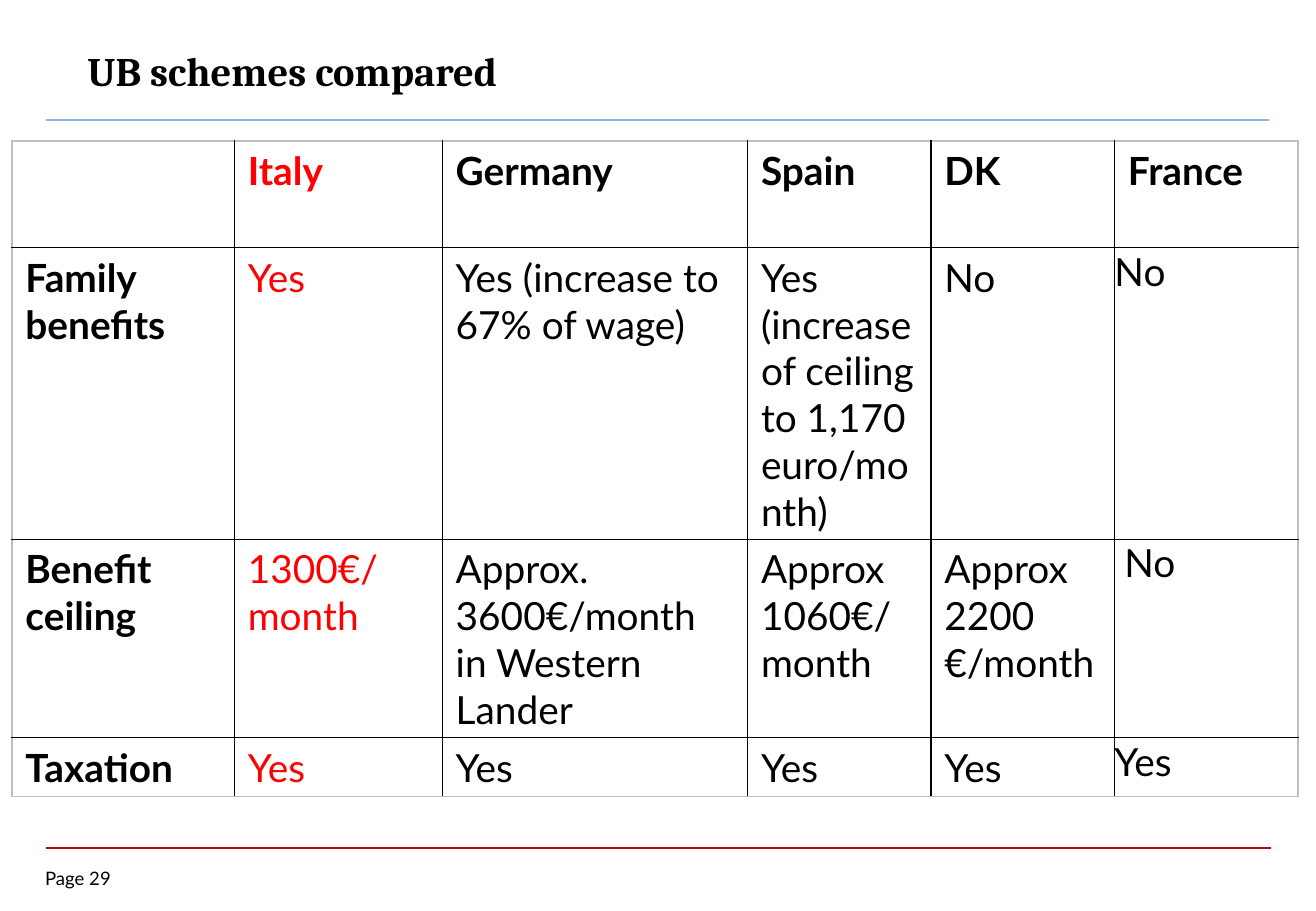
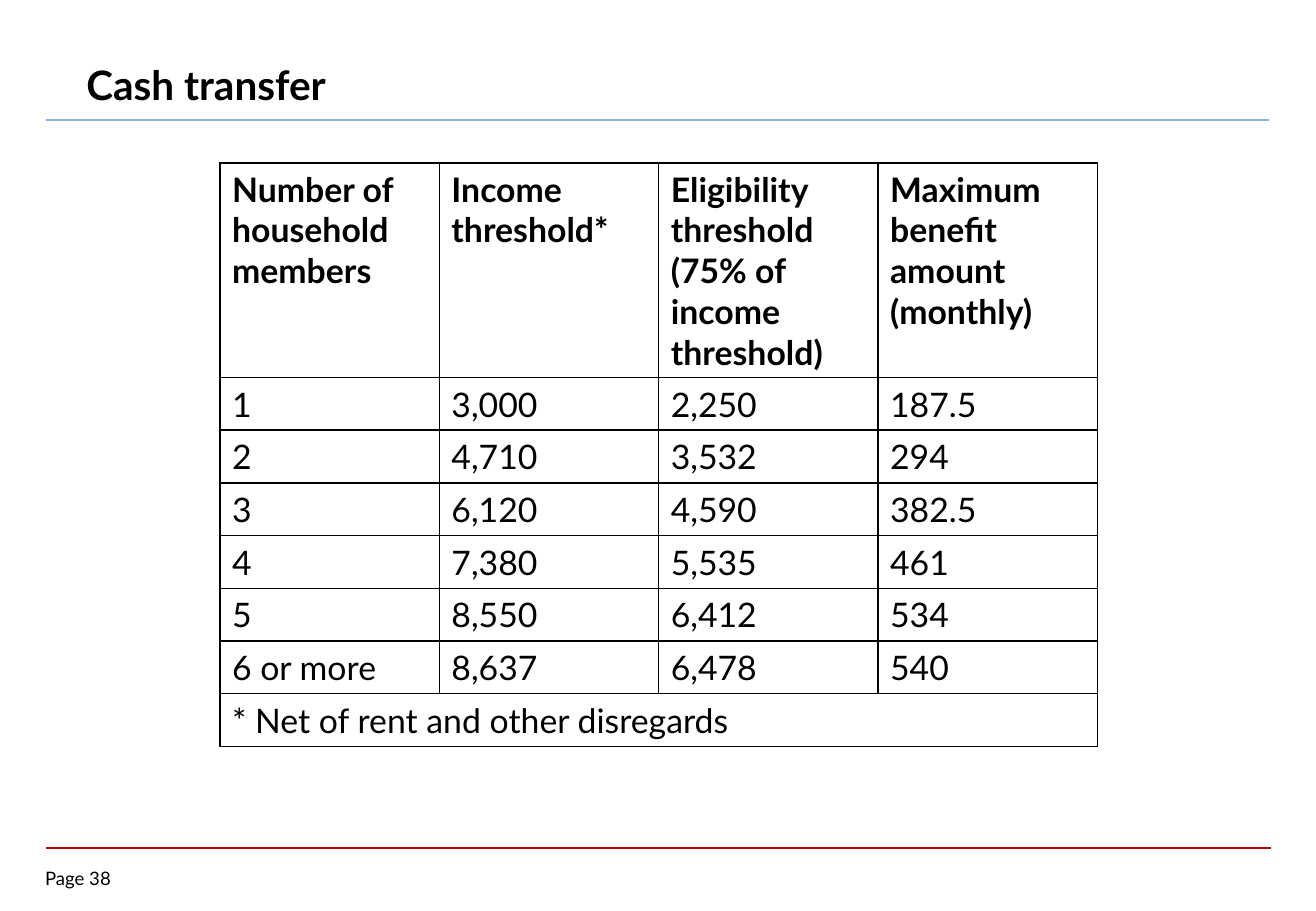
from lxml import etree
from pptx import Presentation
from pptx.dml.color import RGBColor
from pptx.enum.shapes import MSO_CONNECTOR
from pptx.enum.text import MSO_ANCHOR, MSO_AUTO_SIZE, PP_ALIGN
from pptx.oxml.ns import qn
from pptx.util import Inches, Pt

STRAIGHT = MSO_CONNECTOR.STRAIGHT
LEFT = PP_ALIGN.LEFT
TOP, MIDDLE = MSO_ANCHOR.TOP, MSO_ANCHOR.MIDDLE
FIXED = MSO_AUTO_SIZE.NONE

WIDTH, HEIGHT = Inches(10.83), Inches(7.5)
BLACK, WHITE, RED, GREY = "000000", "FFFFFF", "FF0000", "BFBFBF"
HEAD_RULE, FOOT_RULE = "8EB4E3", "C00000"
SANS, SERIF = "Lato", "Cambria"
TITLE_ONLY = 5


def color(hex_code):
    return RGBColor.from_string(hex_code)


def across(percent):
    return round(WIDTH * percent / 100)


def down(percent):
    return round(HEIGHT * percent / 100)


class Deck:
    """Shared style and the current slide; lengths are percent of the slide."""

    def __init__(self):
        self.prs = Presentation()
        self.prs.slide_width, self.prs.slide_height = WIDTH, HEIGHT
        self.slide = None

    def new_slide(self, title, page, left, top, width, font=SANS):
        self.slide = self.prs.slides.add_slide(self.prs.slide_layouts[TITLE_ONLY])
        self.rule(13.2, 96.4, HEAD_RULE, 1.5)
        self.rule(93.07, 96.58, FOOT_RULE, 1)
        self.title(title, left, top, width, font)
        self.page_label(page)

    def add_text(self, paragraph, text, size, bold=False, font=SANS, ink=BLACK):
        paragraph.alignment = LEFT
        run = paragraph.add_run()
        run.text = text
        run.font.name, run.font.size, run.font.bold = font, Pt(size), bold
        run.font.color.rgb = color(ink)

    def title(self, text, left, top, width, font):
        holder = self.slide.shapes.title
        holder.left, holder.top = across(left), down(top)
        holder.width, holder.height = across(width), down(6.67)
        frame = holder.text_frame
        frame.auto_size, frame.vertical_anchor = FIXED, MIDDLE
        self.add_text(frame.paragraphs[0], text, 24, True, font)

    def rule(self, y, right, ink, weight):
        line = self.slide.shapes.add_connector(
            STRAIGHT, across(3.5), down(y), across(right), down(y))
        line.line.color.rgb = color(ink)
        line.line.width = Pt(weight)
        etree.SubElement(line._element.spPr, qn("a:effectLst"))

    def page_label(self, page):
        label = self.slide.shapes.add_textbox(
            across(3.42), down(95.2), across(8), down(2.93))
        frame = label.text_frame
        frame.word_wrap = True
        frame.margin_left = frame.margin_right = 0
        frame.margin_top = frame.margin_bottom = 0
        self.add_text(frame.paragraphs[0], f"Page {page}", 11)

    def border(self, cell, side, ink):
        edge = etree.SubElement(cell._tc.get_or_add_tcPr(), qn(f"a:ln{side}"),
                                w=str(Pt(1)))
        fill = etree.SubElement(edge, qn("a:solidFill"))
        etree.SubElement(fill, qn("a:srgbClr"), val=ink)

    def table(self, left, top, columns, heights, rows, size, frame_ink=BLACK,
              inset=0.1, bold_column=None, red_column=None, flush_column=None):
        table = self.slide.shapes.add_table(
            len(rows), len(columns), across(left), down(top),
            across(sum(columns)), down(sum(heights))).table
        table.first_row = table.horz_banding = False
        for column, width in zip(table.columns, columns):
            column.width = across(width)
        for row, height in zip(table.rows, heights):
            row.height = down(height)

        last_row, last_column = len(rows) - 1, len(columns) - 1
        for r, texts in enumerate(rows):
            # A row with a single text spans the whole table
            if len(texts) == 1:
                table.cell(r, 0).merge(table.cell(r, last_column))
            for c, text in enumerate(texts):
                cell = table.cell(r, c)
                outer = {"L": c == 0, "R": c == len(texts) - 1,
                         "T": r == 0, "B": r == last_row}
                for side, is_outer in outer.items():
                    self.border(cell, side, frame_ink if is_outer else BLACK)
                cell.fill.solid()
                cell.fill.fore_color.rgb = color(WHITE)
                cell.vertical_anchor = TOP
                flush = r > 0 and c == flush_column
                cell.margin_left = cell.margin_right = Inches(0 if flush else inset)
                cell.margin_top = cell.margin_bottom = Inches(0 if flush else 0.05)
                if text:
                    self.add_text(cell.text_frame.paragraphs[0], text, size,
                                  bold=r == 0 or c == bold_column,
                                  ink=RED if c == red_column else BLACK)


def main():
    deck = Deck()

    # Unemployment benefit schemes by country
    deck.new_slide("UB schemes compared", 29, 5.72, 4.4, 70.54, SERIF)
    schemes = [
        ["", "Italy", "Germany", "Spain", "DK", "France"],
        ["Family benefits", "Yes", "Yes (increase to 67% of wage)",
         "Yes (increase of ceiling to 1,170 euro/month)", "No", "No"],
        ["Benefit ceiling", "1300€/month", "Approx. 3600€/month in Western Lander",
         "Approx 1060€/month", "Approx 2200 €/month", " No"],
        ["Taxation", "Yes", "Yes", "Yes", "Yes", "Yes"],
    ]
    deck.table(0.92, 15.47, [16.9, 15.8, 23.2] + [13.94] * 3,
               [11.73, 32, 21.7, 6.4], schemes, 23, frame_ink=GREY, inset=0.11,
               bold_column=0, red_column=1, flush_column=5)

    # Thresholds and benefit by household size
    deck.new_slide("Cash transfer", 38, 5.63, 5.87, 65.1)
    transfers = [
        ["Number of household members", "Income threshold*",
         "Eligibility threshold (75% of income threshold)",
         "Maximum benefit amount (monthly)"],
        ["1", "3,000", "2,250", "187.5"],
        ["2", "4,710", "3,532", "294"],
        ["3", "6,120", "4,590", "382.5"],
        ["4", "7,380", "5,535", "461"],
        ["5", "8,550", "6,412", "534"],
        ["6 or more", "8,637", "6,478", "540"],
        ["* Net of rent and other disregards"],
    ]
    deck.table(16.71, 17.87, [16.67] * 4, [23.55] + [5.77] * 7, transfers, 20)

    deck.prs.save("out.pptx")


if __name__ == "__main__":
    main()
